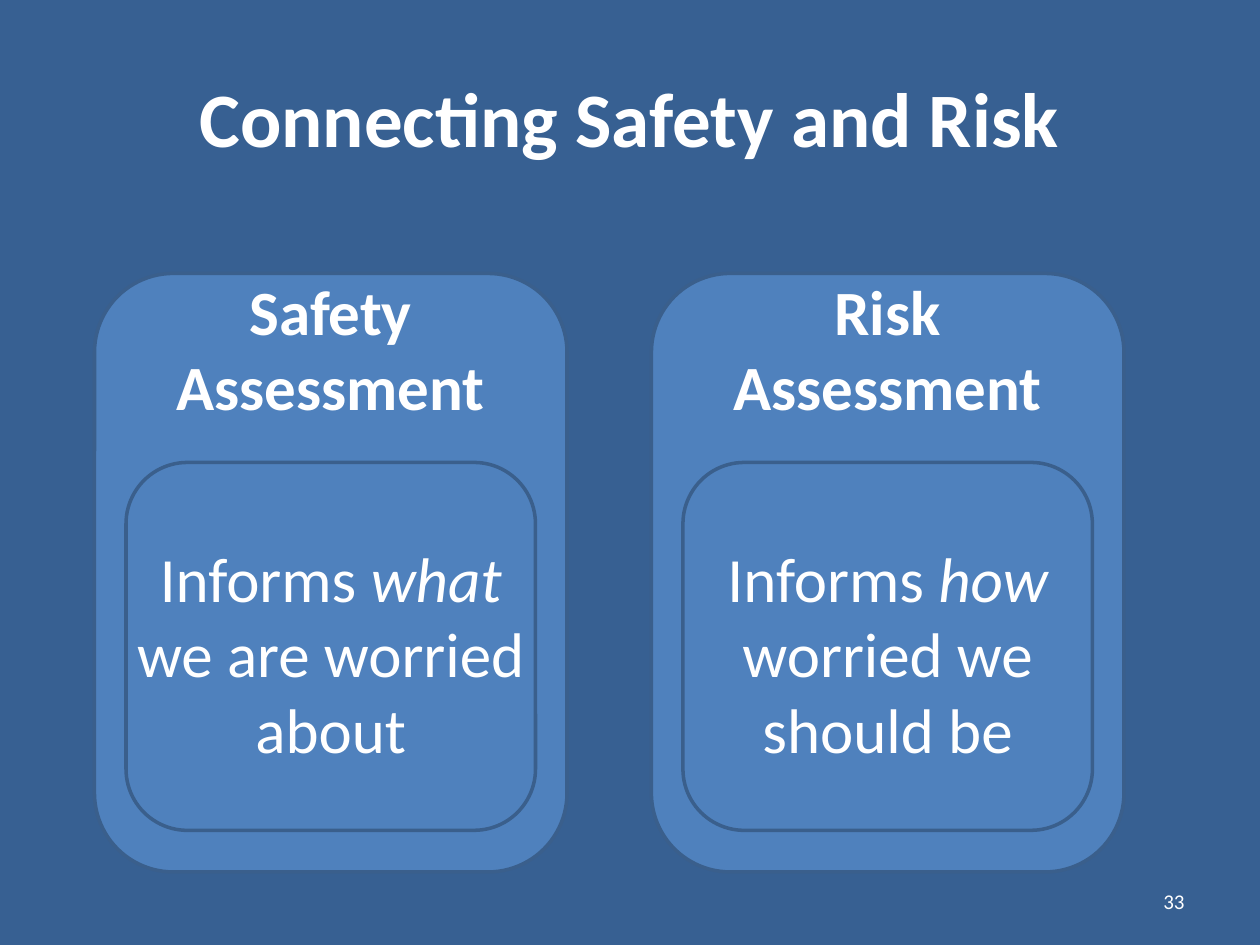
from dataclasses import dataclass

from pptx import Presentation
from pptx.dml.color import RGBColor
from pptx.enum.shapes import MSO_SHAPE
from pptx.enum.text import MSO_ANCHOR, PP_ALIGN
from pptx.util import Inches, Pt


@dataclass(frozen=True)
class Theme:
    font: str = "Calibri"
    back: RGBColor = RGBColor(0x37, 0x60, 0x92)
    fill: RGBColor = RGBColor(0x4F, 0x81, 0xBD)
    line: RGBColor = RGBColor(0x3A, 0x5F, 0x8C)
    text: RGBColor = RGBColor(0xFF, 0xFF, 0xFF)
    title: int = 44
    body: int = 36
    small: int = 12
    gap: int = 66
    edge: int = 2


class Deck:
    def __init__(self, theme):
        self.theme = theme
        self.file = Presentation()
        self.file.slide_width, self.file.slide_height = Inches(10), Inches(7.5)
        self.slide = self.file.slides.add_slide(self.file.slide_layouts[6])
        fill = self.slide.background.fill
        fill.solid()
        fill.fore_color.rgb = theme.back

    def style(self, para, size, align=PP_ALIGN.CENTER, bold=False):
        para.alignment = align
        font = para.font
        font.name, font.size, font.bold = self.theme.font, Pt(size), bold
        font.color.rgb = self.theme.text

    def label(self, box, text, size, align=PP_ALIGN.CENTER, bold=False):
        frame = self.slide.shapes.add_textbox(*map(Inches, box)).text_frame
        frame.word_wrap = True
        frame.vertical_anchor = MSO_ANCHOR.MIDDLE
        frame.text = text
        self.style(frame.paragraphs[0], size, align, bold)

    def panel(self, box, fill=None):
        shape = self.slide.shapes.add_shape(
            MSO_SHAPE.ROUNDED_RECTANGLE, *map(Inches, box))
        shape.shadow.inherit = False
        if fill is None:
            shape.fill.background()
        else:
            shape.fill.solid()
            shape.fill.fore_color.rgb = fill
        shape.line.color.rgb = self.theme.line
        shape.line.width = Pt(self.theme.edge)
        return shape

    def card(self, left, head, parts):
        # Outer panel holds both the heading and the message
        frame = self.panel((left, 2.17, 3.75, 4.75), self.theme.fill).text_frame
        frame.word_wrap = True
        frame.vertical_anchor = MSO_ANCHOR.MIDDLE
        frame.margin_bottom = Inches(0.9)
        frame.text = head
        self.style(frame.paragraphs[0], self.theme.body, bold=True)

        # Message, with its middle part in italics
        para = frame.add_paragraph()
        self.style(para, self.theme.body)
        para.space_before = Pt(self.theme.gap)
        for part in parts:
            para.add_run().text = part
        para.runs[1].font.italic = True

        # Inner outline
        self.panel((left + 0.25, 3.67, 3.25, 2.92))


def main():
    theme = Theme()
    deck = Deck(theme)

    # Title
    deck.label((0.5, 0.3, 9, 1.25), "Connecting Safety and Risk",
               theme.title, bold=True)

    # Page number
    deck.label((7.17, 6.95, 2.33, 0.4), "33", theme.small, PP_ALIGN.RIGHT)

    # Two cards
    cards = [
        ("Safety Assessment", ("Informs ", "what", " we are worried about")),
        ("Risk Assessment", ("Informs ", "how", " worried we should be")),
    ]
    for spot, (head, parts) in enumerate(cards):
        deck.card(0.75 + spot * 4.42, head, parts)

    deck.file.save("out.pptx")


if __name__ == "__main__":
    main()
